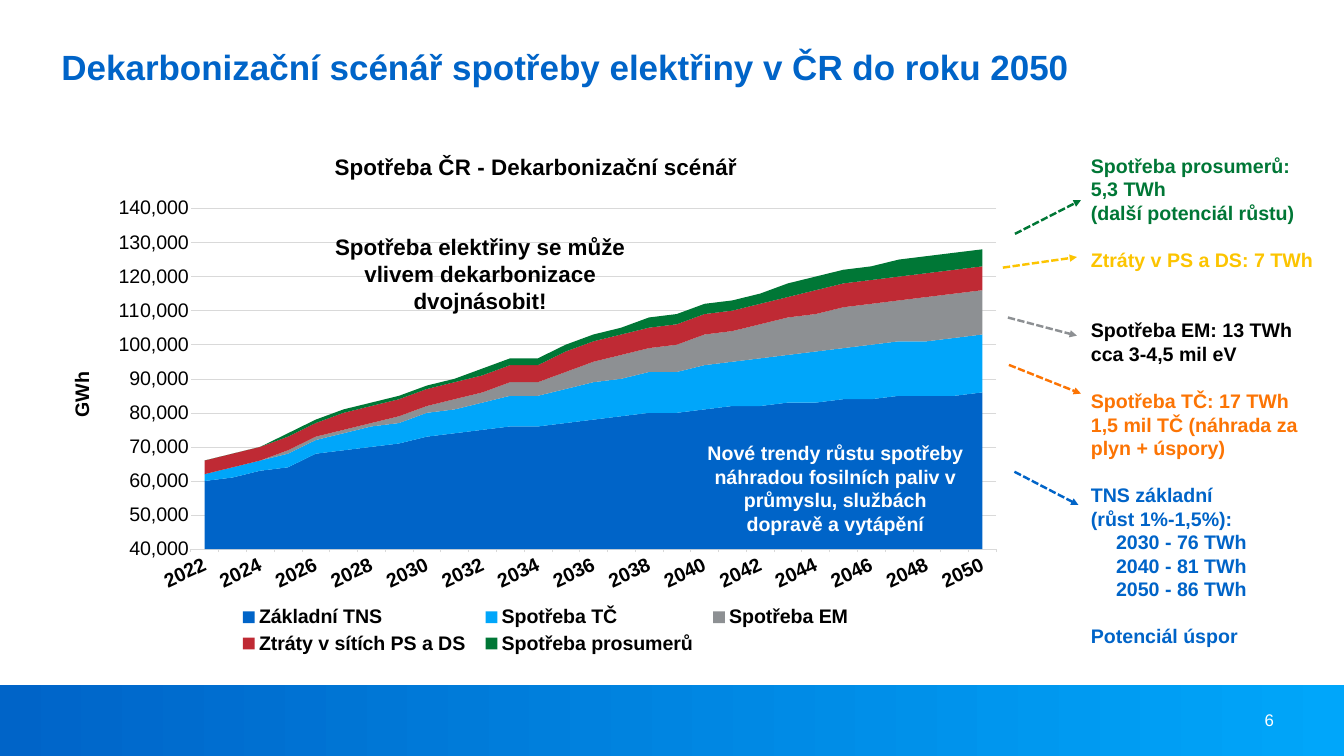
from dataclasses import dataclass

from lxml import etree
from pptx import Presentation
from pptx.chart.data import CategoryChartData
from pptx.dml.color import RGBColor
from pptx.enum.chart import XL_CHART_TYPE, XL_LEGEND_POSITION, XL_TICK_MARK
from pptx.enum.dml import MSO_LINE
from pptx.enum.shapes import MSO_CONNECTOR, MSO_SHAPE
from pptx.enum.text import MSO_ANCHOR, PP_ALIGN
from pptx.oxml import parse_xml
from pptx.oxml.ns import nsdecls, qn
from pptx.util import Inches, Pt

AREA = XL_CHART_TYPE.AREA_STACKED
BOTTOM = XL_LEGEND_POSITION.BOTTOM
TICK_OUT, TICK_NONE = XL_TICK_MARK.OUTSIDE, XL_TICK_MARK.NONE
LEFT, CENTER, RIGHT = PP_ALIGN.LEFT, PP_ALIGN.CENTER, PP_ALIGN.RIGHT
TOP, MIDDLE = MSO_ANCHOR.TOP, MSO_ANCHOR.MIDDLE
RECTANGLE, STRAIGHT = MSO_SHAPE.RECTANGLE, MSO_CONNECTOR.STRAIGHT
SHORT_DASH = MSO_LINE.SQUARE_DOT


@dataclass(frozen=True)
class Theme:
    font: str = "Arial"
    blue: str = "0064C8"
    sky: str = "00A6FA"
    gray: str = "8D9093"
    red: str = "BF2A34"
    green: str = "007736"
    yellow: str = "FCC400"
    orange: str = "FC7404"
    black: str = "000000"
    white: str = "FFFFFF"
    grid: str = "D9D9D9"
    title: int = 50
    callout: int = 32
    body: int = 28
    number: int = 24


T = Theme()


@dataclass(frozen=True)
class Box:
    x: int
    y: int
    w: int
    h: int

    def point(self, px, py):
        """Point at a percentage of the box."""
        return int(self.x + self.w * px / 100), int(self.y + self.h * py / 100)

    def share(self, px, py, pw, ph):
        """Inner box given in percentages of this one."""
        return Box(*self.point(px, py), int(self.w * pw / 100), int(self.h * ph / 100))

    @property
    def rect(self):
        return self.x, self.y, self.w, self.h


# Values in thousands of GWh, one for each year
YEARS = range(2022, 2051)
SERIES = [
    ("Základní TNS", T.blue,
     [60, 61, 63, 64, 68, 69, 70, 71, 73, 74, 75, 76, 76, 77, 78, 79, 80, 80, 81, 82, 82, 83, 83,
      84, 84, 85, 85, 85, 86]),
    ("Spotřeba TČ", T.sky,
     [2, 3, 3, 4, 4, 5, 6, 6, 7, 7, 8, 9, 9, 10, 11, 11, 12, 12, 13, 13, 14, 14, 15, 15, 16, 16,
      16, 17, 17]),
    ("Spotřeba EM", T.gray,
     [0, 0, 0, 1, 1, 1, 1, 2, 2, 3, 3, 4, 4, 5, 6, 7, 7, 8, 9, 9, 10, 11, 11, 12, 12, 12, 13, 13,
      13]),
    ("Ztráty v sítích PS a DS", T.red, [4] * 5 + [5] * 8 + [6] * 9 + [7] * 7),
    ("Spotřeba prosumerů", T.green, [0] * 3 + [1] * 7 + [2] * 6 + [3] * 5 + [4] * 4 + [5] * 4),
]

# Side notes: colour, blank lines before, lines (text, indented)
NOTES = [
    (T.green, 0, [("Spotřeba prosumerů: 5,3 TWh", False), ("(další potenciál růstu)", False)]),
    (T.yellow, 1, [("Ztráty v PS a DS: 7 TWh", False)]),
    (T.black, 2, [("Spotřeba EM: 13 TWh", False), ("cca 3-4,5 mil eV", False)]),
    (T.orange, 1, [("Spotřeba TČ: 17 TWh", False),
                   ("1,5 mil TČ (náhrada za plyn + úspory)", False)]),
    (T.blue, 1, [("TNS základní", False), ("(růst 1%-1,5%):", False), ("2030 - 76 TWh", True),
                 ("2040 - 81 TWh", True), ("2050 - 86 TWh", True)]),
    (T.blue, 1, [("Potenciál úspor", False)]),
]

# Arrows: colour, start and end in percentages of the gutter
ARROWS = [
    (T.green, (15.48, 11.07), (100, 0)),
    (T.yellow, (0, 22.15), (94.84, 18.68)),
    (T.gray, (6.45, 38.51), (94.84, 44.46)),
    (T.orange, (7.74, 54.05), (100, 63.47)),
    (T.blue, (14.84, 89.09), (96.77, 100)),
]


def set_font(font, size, color=T.black, bold=False):
    font.name, font.size, font.bold = T.font, Pt(size), bold
    font.color.rgb = RGBColor.from_string(color)


def add_frame(s, box, anchor=TOP):
    tf = s.shapes.add_textbox(*box.rect).text_frame
    tf.word_wrap, tf.vertical_anchor = True, anchor
    return tf


def add_text(s, box, text, size, color, bold=True, align=LEFT, anchor=TOP):
    tf = add_frame(s, box, anchor)
    p = tf.paragraphs[0]
    p.text, p.alignment = text, align
    set_font(p.font, size, color, bold)
    return tf


def add_footer(s, box):
    bar = s.shapes.add_shape(RECTANGLE, *box.rect)
    bar.shadow.inherit = False
    bar.line.fill.background()
    bar.fill.gradient()
    bar.fill.gradient_angle = 0
    for stop, color, position in zip(bar.fill.gradient_stops, (T.blue, T.sky), (0, 1)):
        stop.color.rgb, stop.position = RGBColor.from_string(color), position
    tf = add_text(s, box.share(84.18, 12.86, 10.61, 72.86), "6", T.number, T.white, False,
                  RIGHT, MIDDLE)
    tf.margin_left = tf.margin_top = tf.margin_right = tf.margin_bottom = 0


def place(parent, before, x, y, w, h, inner=False):
    """Manual layout of a chart element, inserted ahead of the named child."""
    tags = [("layoutTarget", "inner")] if inner else []
    tags += [("xMode", "edge"), ("yMode", "edge"), ("x", x), ("y", y), ("w", w), ("h", h)]
    for old in parent.findall(qn("c:layout")):
        parent.remove(old)
    layout = etree.Element(qn("c:layout"))
    manual = etree.SubElement(layout, qn("c:manualLayout"))
    for tag, value in tags:
        etree.SubElement(manual, qn(f"c:{tag}")).set("val", str(value))
    parent.find(qn(before)).addprevious(layout)


def add_chart(s, box):
    data = CategoryChartData(number_format="#,##0")
    data.categories = [str(year) for year in YEARS]
    for name, _, values in SERIES:
        data.add_series(name, [value * 1000 for value in values])
    chart = s.shapes.add_chart(AREA, *box.rect, data).chart
    set_font(chart.font, T.body)
    for series, (_, color, _) in zip(chart.plots[0].series, SERIES):
        series.format.fill.solid()
        series.format.fill.fore_color.rgb = RGBColor.from_string(color)

    # Titles
    chart.has_title = True
    category, value = chart.category_axis, chart.value_axis
    for title, text, size in ((chart.chart_title, "Spotřeba ČR - Dekarbonizační scénář", T.callout),
                              (value.axis_title, "GWh", T.body)):
        p = title.text_frame.paragraphs[0]
        p.text = text
        set_font(p.font, size, bold=True)
    chart.chart_title.include_in_layout = False

    # Axes
    value.minimum_scale, value.maximum_scale, value.major_unit = 40000, 140000, 10000
    value.major_tick_mark, category.major_tick_mark = TICK_NONE, TICK_OUT
    value.minor_tick_mark = category.minor_tick_mark = TICK_NONE
    value.tick_labels.number_format = "#,##0"
    value.tick_labels.number_format_is_linked = False
    value.format.line.fill.background()
    value.has_major_gridlines = True
    category.has_major_gridlines = False
    for line in (value.major_gridlines.format.line, category.format.line):
        line.color.rgb, line.width = RGBColor.from_string(T.grid), Pt(0.75)
    set_font(value.tick_labels.font, T.body)
    set_font(category.tick_labels.font, T.body, bold=True)
    root = chart.element
    root.find(f".//{qn('c:crossBetween')}").set("val", "between")
    axis = root.find(f".//{qn('c:valAx')}").getprevious()
    axis.find(f"{qn('c:txPr')}/{qn('a:bodyPr')}").set("rot", str(-25 * 60000))
    skip = parse_xml(f'<c:tickLblSkip {nsdecls("c")} val="2"/>')
    axis.find(qn("c:noMultiLvlLbl")).addprevious(skip)

    # Legend and plot position
    chart.has_legend = True
    chart.legend.position, chart.legend.include_in_layout = BOTTOM, False
    set_font(chart.legend.font, T.body, bold=True)
    place(root.find(f".//{qn('c:legend')}"), "c:overlay", 0.18, 0.89, 0.66, 0.11)
    place(root.find(f".//{qn('c:plotArea')}"), "c:areaChart", 0.14, 0.14, 0.84, 0.65, True)

    # Callouts over the plot
    add_text(s, box.share(25.75, 18.27, 36.89, 16.54),
             "Spotřeba elektřiny se může vlivem dekarbonizace dvojnásobit!",
             T.callout, T.black, align=CENTER)
    add_text(s, box.share(66.95, 57.88, 28.53, 19.13),
             "Nové trendy růstu spotřeby náhradou fosilních paliv v průmyslu, službách "
             "dopravě a vytápění", T.body, T.white, align=CENTER)


def add_notes(s, box):
    tf = add_frame(s, box)
    p = tf.paragraphs[0]
    for color, gap, lines in NOTES:
        for i, (text, indented) in enumerate(lines):
            if p.text:
                p = tf.add_paragraph()
            p.text = text
            if gap and i == 0:
                p.space_before = Pt(gap * T.body * 1.2)
            if indented:
                p._p.get_or_add_pPr().set("marL", str(Inches(0.5)))
            set_font(p.font, T.body, color, True)


def add_arrows(s, box):
    for color, start, end in ARROWS:
        arrow = s.shapes.add_connector(STRAIGHT, *box.point(*start), *box.point(*end))
        line = arrow.line
        line.color.rgb, line.width = RGBColor.from_string(color), Pt(3.5)
        line.dash_style = SHORT_DASH
        etree.SubElement(line._get_or_add_ln(), qn("a:tailEnd")).set("type", "triangle")
        etree.SubElement(arrow._element.spPr, qn("a:effectLst"))


def main():
    prs = Presentation()
    prs.slide_width, prs.slide_height = Inches(26.67), Inches(15)
    s = prs.slides.add_slide(prs.slide_layouts[6])
    page = Box(0, 0, prs.slide_width, prs.slide_height)
    add_footer(s, page.share(0, 90.67, 100, 9.33))
    tf = add_text(s, page.share(4.2, 6.33, 89.46, 10.53),
                  "Dekarbonizační scénář spotřeby elektřiny v ČR do roku 2050", T.title, T.blue)
    tf.paragraphs[0].line_spacing = 0.9
    add_chart(s, page.share(4.2, 17.87, 71.35, 69.33))
    add_notes(s, page.share(80.8, 20, 17.62, 66.67))
    add_arrows(s, page.share(74.62, 26.47, 5.81, 40.33))
    prs.save("out.pptx")


if __name__ == "__main__":
    main()
